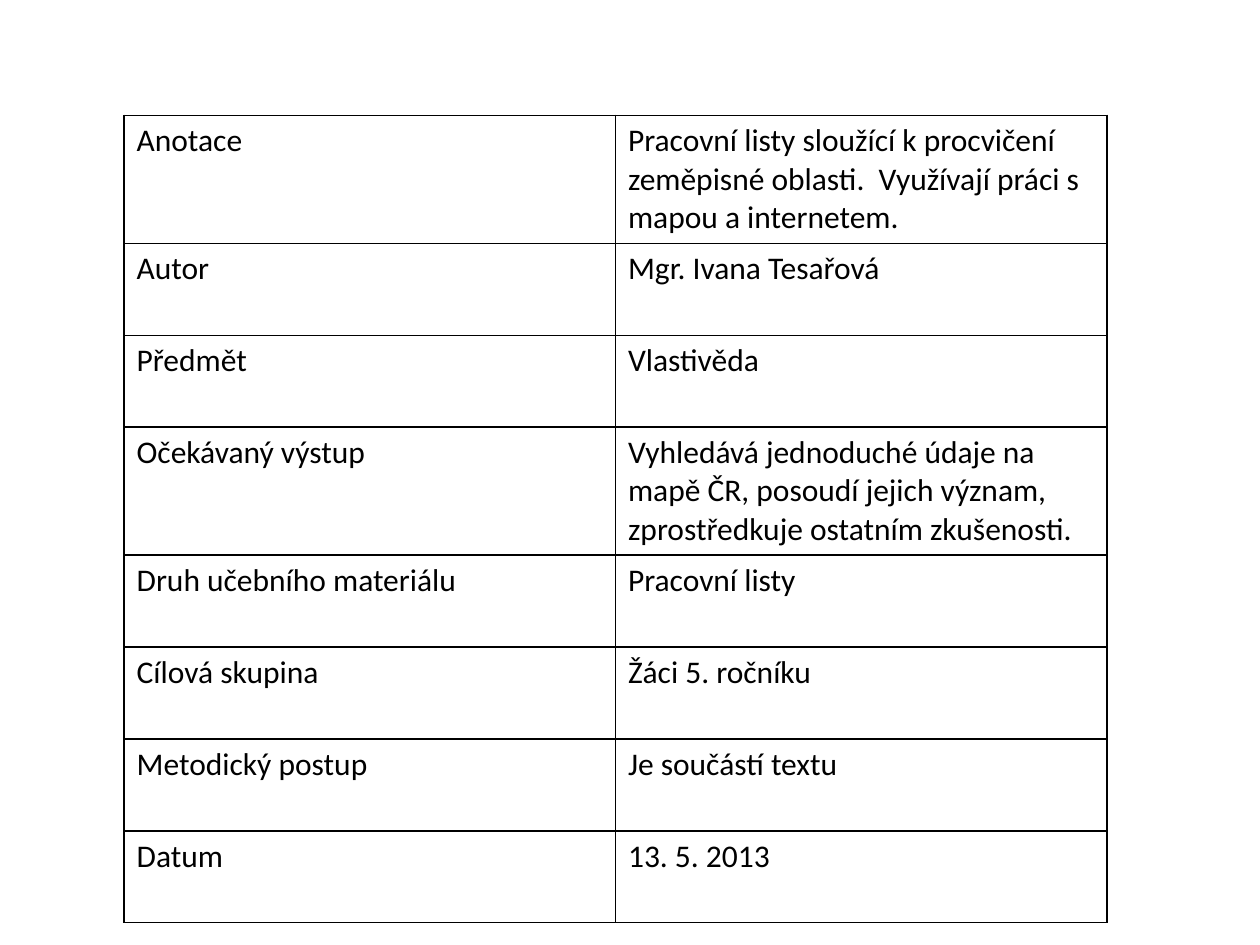
from lxml import etree
from pptx import Presentation
from pptx import util as u
from pptx.dml.color import RGBColor
from pptx.oxml.ns import qn

ROWS = [
    ("Anotace", "Pracovní listy sloužící k procvičení zeměpisné oblasti.  "
                "Využívají práci s mapou a internetem."),
    ("Autor", "Mgr. Ivana Tesařová"),
    ("Předmět", "Vlastivěda"),
    ("Očekávaný výstup", "Vyhledává jednoduché údaje na mapě ČR, posoudí jejich "
                         "význam, zprostředkuje ostatním zkušenosti."),
    ("Druh učebního materiálu", "Pracovní listy"),
    ("Cílová skupina", "Žáci 5. ročníku"),
    ("Metodický postup", "Je součástí textu"),
    ("Datum", "13. 5. 2013"),
]
COL, ROW = 280.8, 52.5


def color(code):
    return RGBColor.from_string(code)


def write(frame, words, size=18, font="Calibri", ink="000000", bold=False):
    run = frame.paragraphs[0].add_run()
    run.text = words
    run.font.size = u.Pt(size)
    run.font.name = font
    run.font.bold = bold
    run.font.color.rgb = color(ink)


def border(cell, ink="000000", width=1):
    props = cell._tc.get_or_add_tcPr()
    # Borders must come before the fill
    for spot, side in enumerate(("lnL", "lnR", "lnT", "lnB")):
        line = etree.Element(qn(f"a:{side}"), w=str(u.Pt(width)))
        fill = etree.SubElement(line, qn("a:solidFill"))
        etree.SubElement(fill, qn("a:srgbClr"), val=str(color(ink)))
        props.insert(spot, line)


def grid(slide, rows, left, top):
    count, wide = len(rows), len(rows[0])
    table = slide.shapes.add_table(count, wide, u.Pt(left), u.Pt(top),
                                   u.Pt(wide * COL), u.Pt(count * ROW)).table
    table.first_row = table.horz_banding = False
    for col in table.columns:
        col.width = u.Pt(COL)
    for row, texts in zip(table.rows, rows):
        row.height = u.Pt(ROW)
        for cell, words in zip(row.cells, texts):
            cell.fill.background()
            border(cell)
            write(cell.text_frame, words)


def main():
    # Slide
    deck = Presentation()
    deck.slide_width, deck.slide_height = u.Pt(720), u.Pt(540)
    slide = deck.slides.add_slide(deck.slide_layouts[6])

    # Table of details on the teaching material
    grid(slide, ROWS, left=70.9, top=66)
    deck.save("out.pptx")


if __name__ == "__main__":
    main()
